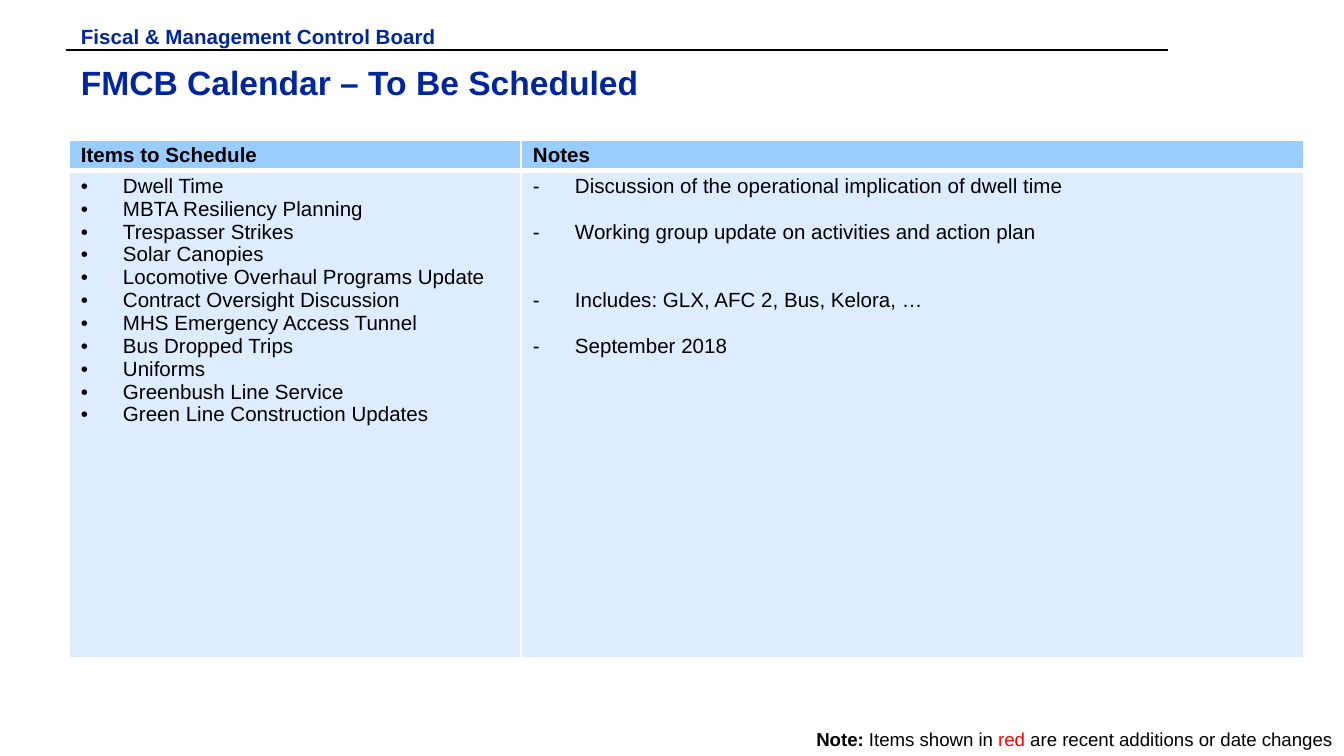
import pptx
import pptx.util
import pptx.dml.color
import pptx.enum.shapes
import pptx.enum.text
import pptx.oxml.ns
from lxml import etree

EMU_PER_PX = 914400 / 134.4
FONT = "Arial"
LINE_PT = 12.3  # height of one 11 pt line
COLOURS = {
    "navy": "00269E",
    "black": "000000",
    "red": "FF0000",
    "white": "FFFFFF",
    "header": "99CCFF",
    "body": "DEECFF",
}
ITEMS = [
    "Dwell Time",
    "MBTA Resiliency Planning",
    "Trespasser Strikes",
    "Solar Canopies",
    "Locomotive Overhaul Programs Update",
    "Contract Oversight Discussion",
    "MHS Emergency Access Tunnel",
    "Bus Dropped Trips",
    "Uniforms",
    "Greenbush Line Service",
    "Green Line Construction Updates",
]
# Each note stands beside the item with the same line number.
NOTES = {
    0: "Discussion of the operational implication of dwell time",
    2: "Working group update on activities and action plan",
    5: "Includes: GLX, AFC 2, Bus, Kelora, …",
    7: "September 2018",
}


def px(length):
    return pptx.util.Emu(round(length * EMU_PER_PX))


def rgb(name):
    return pptx.dml.color.RGBColor.from_string(COLOURS[name])


def add_xml(parent, tag, **attributes):
    return etree.SubElement(parent, pptx.oxml.ns.qn(tag), attributes)


class SlideBuilder:
    def __init__(self, slide):
        self.slide = slide

    def style(self, font, size, colour="black", bold=False):
        font.name = FONT
        font.size = pptx.util.Pt(size)
        font.bold = bold
        font.color.rgb = rgb(colour)

    def rule(self, left, right, y):
        line = self.slide.shapes.add_connector(
            pptx.enum.shapes.MSO_CONNECTOR.STRAIGHT, px(left), px(y), px(right), px(y))
        line.line.color.rgb = rgb("black")
        line.line.width = pptx.util.Pt(1)
        add_xml(line._element.spPr, "a:effectLst")

    def text(self, left, top, width, height):
        """Add an empty text box and return its first paragraph."""
        frame = self.slide.shapes.add_textbox(
            px(left), px(top), px(width), px(height)).text_frame
        frame.word_wrap = True
        frame.margin_left = frame.margin_right = px(12)
        frame.margin_top = frame.margin_bottom = px(6)
        return frame.paragraphs[0]

    def heading(self, words, size, left, top, width, height):
        paragraph = self.text(left, top, width, height)
        paragraph.text = words
        self.style(paragraph.font, size, "navy", True)

    def table(self, left, top, widths, heights):
        table = self.slide.shapes.add_table(
            len(heights), len(widths), px(left), px(top),
            px(sum(widths)), px(sum(heights))).table
        for column, width in zip(table.columns, widths):
            column.width = px(width)
        for row, height in zip(table.rows, heights):
            row.height = px(height)
        return table

    def cell(self, cell, fill, borders):
        """Set margins, fill and white borders; borders maps a side to points."""
        cell.margin_left = cell.margin_right = px(12)
        cell.margin_top = cell.margin_bottom = px(4)
        properties = cell._tc.get_or_add_tcPr()
        for side in "LRTB":
            border = add_xml(properties, f"a:ln{side}",
                             w=str(pptx.util.Pt(borders.get(side, 1))))
            solid = add_xml(border, "a:solidFill")
            add_xml(solid, "a:srgbClr", val=COLOURS["white"])
        cell.fill.solid()
        cell.fill.fore_color.rgb = rgb(fill)

    def header(self, cell, words):
        self.cell(cell, "header", {"B": 3})
        cell.vertical_anchor = pptx.enum.text.MSO_ANCHOR.MIDDLE
        paragraph = cell.text_frame.paragraphs[0]
        paragraph.text = words
        self.style(paragraph.font, 11, bold=True)

    def bullets(self, cell, mark, lines):
        """Fill a cell with bullets; lines maps a line number to its words."""
        self.cell(cell, "body", {"T": 3})
        frame = cell.text_frame
        previous = None
        for number, words in lines.items():
            first = previous is None
            paragraph = frame.paragraphs[0] if first else frame.add_paragraph()
            properties = paragraph._p.get_or_add_pPr()
            properties.set("marL", str(px(42)))
            properties.set("indent", str(-px(42)))
            if not first and number - previous > 1:
                paragraph.space_before = pptx.util.Pt(LINE_PT * (number - previous - 1))
            add_xml(properties, "a:buFont", typeface=FONT)
            add_xml(properties, "a:buChar", char=mark)
            paragraph.text = words
            self.style(paragraph.font, 11)
            previous = number


def main():
    deck = pptx.Presentation()
    deck.slide_width, deck.slide_height = px(1344), px(756)
    builder = SlideBuilder(deck.slides.add_slide(deck.slide_layouts[6]))

    builder.rule(66, 1168, 50)
    calendar = builder.table(69, 140, [452, 783], [30, 487])
    builder.header(calendar.cell(0, 0), "Items to Schedule")
    builder.header(calendar.cell(0, 1), "Notes")
    builder.bullets(calendar.cell(1, 0), "•", dict(enumerate(ITEMS)))
    builder.bullets(calendar.cell(1, 1), "-", NOTES)

    builder.heading("FMCB Calendar – To Be Scheduled", 18, 69, 56, 1124, 64)
    builder.heading("Fiscal & Management Control Board", 11, 69, 18, 458, 26)

    footnote = builder.text(779, 722, 565, 35)
    footnote.alignment = pptx.enum.text.PP_ALIGN.RIGHT
    for words, colour, bold in [
        ("Note: ", "black", True),
        ("Items shown in ", "black", False),
        ("red", "red", False),
        (" are recent additions or date changes", "black", False),
    ]:
        run = footnote.add_run()
        run.text = words
        builder.style(run.font, 10, colour, bold)

    deck.save("out.pptx")


if __name__ == "__main__":
    main()
